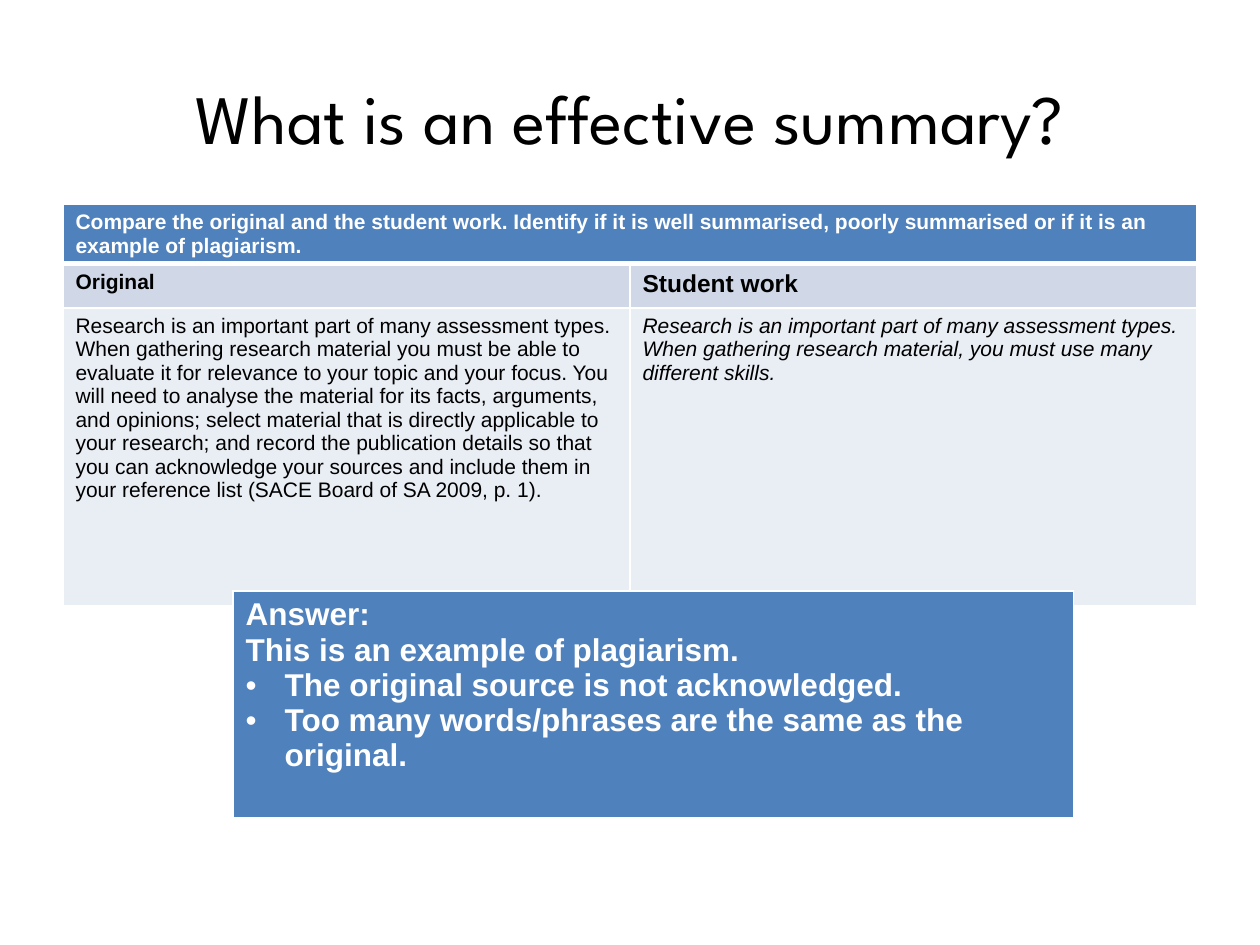
import pptx
import pptx.dml.color
import pptx.enum.text
import pptx.oxml
import pptx.oxml.ns
import pptx.util

Inches = pptx.util.Inches
Pt = pptx.util.Pt
RGB = pptx.dml.color.RGBColor.from_string

THEME = {
    "blue": "4F81BD", "heading": "D0D8E8", "body": "E9EDF4",
    "white": "FFFFFF", "black": "000000",
    "title_size": 39.6, "text_size": 12, "student_size": 14, "answer_size": 18,
    "title_font": "League Spartan", "text_font": "Arial",
}


def style_paragraph(paragraph, color, size, **extra):
    font_format = {"name": THEME["text_font"], "size": Pt(size), "bold": False, **extra}
    for attribute, value in font_format.items():
        setattr(paragraph.font, attribute, value)
    paragraph.font.color.rgb = RGB(THEME[color])


def paint_cell(cell, fill, bottom_width):
    widths = {"a:lnL": 1, "a:lnR": 1, "a:lnT": 1, "a:lnB": bottom_width}
    properties = cell._tc.get_or_add_tcPr()
    for tag, width in widths.items():
        properties.append(pptx.oxml.parse_xml(
            f'<{tag} {pptx.oxml.ns.nsdecls("a")} w="{Pt(width)}"><a:solidFill>'
            f'<a:srgbClr val="{THEME["white"]}"/></a:solidFill></{tag}>'))
    cell.fill.solid()
    cell.fill.fore_color.rgb = RGB(THEME[fill])


deck = pptx.Presentation()
deck.slide_width, deck.slide_height = Inches(10), Inches(7.5)
slide = deck.slides.add_slide(deck.slide_layouts[6])

comparison = slide.shapes.add_table(
    3, 2, Inches(0.5), Inches(1.62), Inches(9), Inches(3.15)).table
for row, height in zip(comparison.rows, (0.44, 0.35, 2.36)):
    row.height = Inches(height)
comparison.cell(0, 0).merge(comparison.cell(0, 1))

bold = {"bold": True}
comparison_cells = [
    (0, 0, "Compare the original and the student work. Identify if it is well "
     "summarised, poorly summarised or if it is an example of plagiarism.",
     "blue", "white", "text_size", bold),
    (0, 1, "", "blue", "white", "text_size", bold),
    (1, 0, "Original", "heading", "black", "text_size", bold),
    (1, 1, "Student work", "heading", "black", "student_size", bold),
    (2, 0, "Research is an important part of many assessment types. When gathering "
     "research material you must be able to evaluate it for relevance to your topic "
     "and your focus. You will need to analyse the material for its facts, arguments, "
     "and opinions; select material that is directly applicable to your research; and "
     "record the publication details so that you can acknowledge your sources and "
     "include them in your reference list (SACE Board of SA 2009, p. 1).",
     "body", "black", "text_size", {}),
    (2, 1, "Research is an important part of many assessment types. When gathering "
     "research material, you must use many different skills.",
     "body", "black", "text_size", {"italic": True}),
]
for row, column, wording, fill, color, size, extra in comparison_cells:
    cell = comparison.cell(row, column)
    paint_cell(cell, fill, 3 if row == 0 else 1)
    cell.text = wording
    style_paragraph(cell.text_frame.paragraphs[0], color, THEME[size], **extra)

title = slide.shapes.add_textbox(Inches(0.5), Inches(0.3), Inches(9), Inches(1.25)).text_frame
title_format = {"word_wrap": True, "vertical_anchor": pptx.enum.text.MSO_ANCHOR.MIDDLE,
                "text": "What is an effective summary?"}
for attribute, value in title_format.items():
    setattr(title, attribute, value)
title.paragraphs[0].alignment = pptx.enum.text.PP_ALIGN.CENTER
style_paragraph(title.paragraphs[0], "black", THEME["title_size"], name=THEME["title_font"])

answer = slide.shapes.add_table(
    1, 1, Inches(1.85), Inches(4.69), Inches(6.67), Inches(1.81)).table.cell(0, 0)
paint_cell(answer, "blue", 3)
answer_lines = [
    ("Answer:", False),
    ("This is an example of plagiarism.", False),
    ("The original source is not acknowledged.", True),
    ("Too many words/phrases are the same as the original.", True),
]
answer.text = "\n".join(wording for wording, bulleted in answer_lines)
for paragraph, (wording, bulleted) in zip(answer.text_frame.paragraphs, answer_lines):
    if bulleted:
        properties = paragraph._p.get_or_add_pPr()
        properties.set("marL", str(Inches(0.31)))
        properties.set("indent", str(-Inches(0.31)))
        properties.append(pptx.oxml.parse_xml(
            f'<a:buFont {pptx.oxml.ns.nsdecls("a")} typeface="{THEME["text_font"]}"/>'))
        properties.append(pptx.oxml.parse_xml(
            f'<a:buChar {pptx.oxml.ns.nsdecls("a")} char="•"/>'))
    style_paragraph(paragraph, "white", THEME["answer_size"], bold=True)

deck.save("out.pptx")
